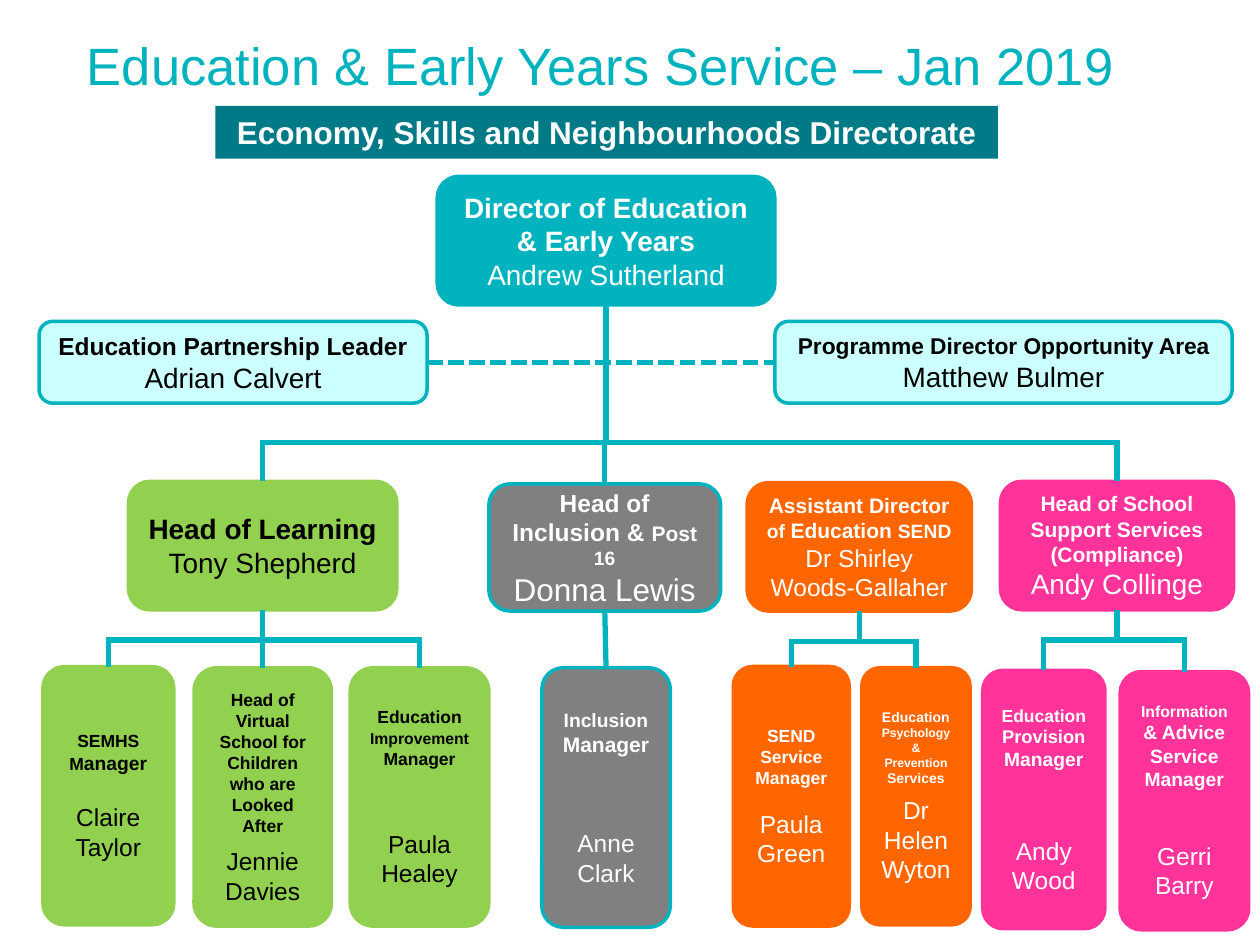
"""Build the Education & Early Years Service organisation chart."""
from lxml import etree
from pptx import Presentation
from pptx.dml.color import RGBColor
from pptx.enum.dml import MSO_LINE
from pptx.enum.shapes import MSO_CONNECTOR, MSO_SHAPE
from pptx.enum.text import MSO_ANCHOR, PP_ALIGN
from pptx.oxml.ns import qn
from pptx.util import Inches, Pt

STRAIGHT = MSO_CONNECTOR.STRAIGHT
RECT, ROUNDED = MSO_SHAPE.RECTANGLE, MSO_SHAPE.ROUNDED_RECTANGLE
TOP, MIDDLE = MSO_ANCHOR.TOP, MSO_ANCHOR.MIDDLE
CENTER, LEFT = PP_ALIGN.CENTER, PP_ALIGN.LEFT
DASH = MSO_LINE.SQUARE_DOT
SIDE_TOP, SIDE_LEFT, SIDE_BOTTOM, SIDE_RIGHT = range(4)

THEME = {
    "font": "Arial",
    "title": 30, "band": 18, "lead": 16, "name": 14,
    "teal": RGBColor(0x00, 0xB3, 0xBE),
    "dark": RGBColor(0x00, 0x7A, 0x87),
    "pale": RGBColor(0xCC, 0xFF, 0xFF),
    "green": RGBColor(0x92, 0xD0, 0x50),
    "grey": RGBColor(0x80, 0x80, 0x80),
    "orange": RGBColor(0xFF, 0x66, 0x00),
    "pink": RGBColor(0xFF, 0x33, 0x99),
    "white": RGBColor(0xFF, 0xFF, 0xFF),
    "black": RGBColor(0x00, 0x00, 0x00),
}
LEAD, NAME = THEME["lead"], THEME["name"]

prs = Presentation()
prs.slide_width, prs.slide_height = Inches(10), Inches(7.5)
s = prs.slides.add_slide(prs.slide_layouts[5])


def write(p, runs, color, bold, align=CENTER):
    p.alignment = align
    p.font.name = THEME["font"]
    p.font.bold = bold
    p.font.color.rgb = color
    sizes = {size for _, size in runs}
    if len(sizes) == 1:
        p.font.size = Pt(sizes.pop())
    for text, size in runs:
        r = p.add_run()
        r.text = text
        if p.font.size is None:
            r.font.size = Pt(size)


def connect(start, end, begin_at=None, end_at=None):
    c = s.shapes.add_connector(STRAIGHT, *start, *end)
    if begin_at:
        c.begin_connect(*begin_at)
    if end_at:
        c.end_connect(*end_at)
    c.line.color.rgb = THEME["teal"]
    c.line.width = Pt(3)
    etree.SubElement(c._element.spPr, qn("a:effectLst"))
    return c


title = s.shapes.title
title.left, title.top = Inches(0.59), Inches(0.21)
title.width, title.height = Inches(8.98), Inches(0.78)
title.fill.solid()
title.fill.fore_color.rgb = THEME["white"]
title.text_frame.vertical_anchor = TOP
write(title.text_frame.paragraphs[0],
      [("Education & Early Years Service – Jan 2019", THEME["title"])],
      THEME["teal"], False, LEFT)

band = s.shapes.add_shape(RECT, Inches(1.71), Inches(0.84), Inches(6.21), Inches(0.42))
band.shadow.inherit = False
band.fill.solid()
band.fill.fore_color.rgb = THEME["dark"]
band.line.fill.background()
write(band.text_frame.paragraphs[0],
      [("Economy, Skills and Neighbourhoods Directorate", THEME["band"])],
      THEME["white"], True)

# key: position, fill, line, text colour, role paragraphs, gap, name, name size
posts = {
    "director": ((3.47, 1.4, 2.68, 1.02), "teal", "teal", "white",
                 [[("Director of Education & Early Years", 16)]],
                 0, "Andrew Sutherland", LEAD),
    "partnership": ((0.31, 2.55, 3.08, 0.65), "pale", "teal", "black",
                    [[("Education Partnership Leader", 14)]],
                    0, "Adrian Calvert", LEAD),
    "programme": ((6.15, 2.55, 3.63, 0.65), "pale", "teal", "black",
                  [[("Programme Director Opportunity Area", 13)]],
                  0, "Matthew Bulmer", LEAD),
    "learning": ((1.02, 3.82, 2.13, 1.02), "green", "green", "black",
                 [[("Head of Learning", 16)]], 0, "Tony Shepherd", LEAD),
    "inclusion": ((3.88, 3.84, 1.84, 1.01), "grey", "teal", "white",
                  [[("Head of Inclusion & ", 14), ("Post", 12), (" 16", 11)]],
                  0, "Donna Lewis", 18),
    "assistant": ((5.93, 3.83, 1.78, 1.02), "orange", "orange", "white",
                  [[("Assistant Director ", 12), ("of ", 11),
                    ("Education ", 12), ("SEND", 11)]],
                  0, "Dr Shirley Woods-Gallaher", NAME),
    "support": ((7.94, 3.82, 1.85, 1.02), "pink", "pink", "white",
                [[("Head of School Support Services (Compliance)", 12)]],
                0, "Andy Collinge", LEAD),
    "semhs": ((0.34, 5.29, 1.04, 2.05), "green", "green", "black",
              [[("SEMHS M", 10), ("anager", 11)]], 16, "Claire Taylor", NAME),
    "virtual": ((1.54, 5.3, 1.09, 2.05), "green", "green", "black",
                [[("Head of Virtual School for Children who are Looked After", 10)]],
                6, "Jennie Davies", NAME),
    "improvement": ((2.78, 5.3, 1.1, 2.05), "green", "green", "black",
                    [[("Education ", 10), ("Improvement", 9), (" Manager", 10)]],
                    34, "Paula Healey", NAME),
    "manager": ((4.3, 5.3, 1.02, 2.06), "grey", "teal", "white",
                [[("Inclusion ", 11), ("Manager", 12)]], 41, "Anne Clark", NAME),
    "send": ((5.82, 5.29, 0.92, 2.06), "orange", "orange", "white",
             [[("SEND Service Manager", 10)]], 12, "Paula Green", NAME),
    "psychology": ((6.84, 5.3, 0.86, 2.04), "orange", "orange", "white",
                   [[("Education", 8), (" Psychology", 7)],
                    [("& Prevention ", 7), ("Services", 8)]],
                   5, "Dr Helen Wyton", NAME),
    "provision": ((7.8, 5.32, 0.97, 2.05), "pink", "pink", "white",
                  [[("Education ", 10), ("Provision ", 10.5), ("Manager", 11)]],
                  37, "Andy Wood", NAME),
    "information": ((8.89, 5.33, 1.02, 2.05), "pink", "pink", "white",
                    [[("Information ", 9), ("& Advice Service Manager", 11)]],
                    29, "Gerri Barry", NAME),
}

boxes = {}
for key, (place, fill, line, ink, roles, gap, name, size) in posts.items():
    sp = s.shapes.add_shape(ROUNDED, *map(Inches, place))
    sp.shadow.inherit = False
    sp.fill.solid()
    sp.fill.fore_color.rgb = THEME[fill]
    sp.line.color.rgb = THEME[line]
    sp.line.width = Pt(2)
    tf = sp.text_frame
    tf.word_wrap = True
    tf.vertical_anchor = MIDDLE
    for i, runs in enumerate(roles):
        write(tf.add_paragraph() if i else tf.paragraphs[0], runs, THEME[ink], True)
    p = tf.add_paragraph()
    p.space_before = Pt(gap)
    write(p, [(name, size)], THEME[ink], False)
    boxes[key] = sp

dashed = connect((0, 0), (0, 0), (boxes["partnership"], SIDE_RIGHT),
                 (boxes["programme"], SIDE_LEFT))
dashed.line.dash_style = DASH

branches = [
    ("director", 3.51, ["learning", "inclusion", "support"]),
    ("learning", 5.08, ["semhs", "virtual", "improvement"]),
    ("assistant", 5.09, ["send", "psychology"]),
    ("support", 5.08, ["provision", "information"]),
]
half = Pt(1.5)
for parent, level, children in branches:
    y = Inches(level)
    box = boxes[parent]
    x = box.left + box.width // 2
    connect((x, y), (x, y), begin_at=(box, SIDE_BOTTOM))
    centres = [boxes[c].left + boxes[c].width // 2 for c in children]
    connect((centres[0] - half, y), (centres[-1] + half, y))
    for child, x in zip(children, centres):
        connect((x, y), (x, y), end_at=(boxes[child], SIDE_TOP))

connect((0, 0), (0, 0), (boxes["inclusion"], SIDE_BOTTOM), (boxes["manager"], SIDE_TOP))

prs.save("out.pptx")
